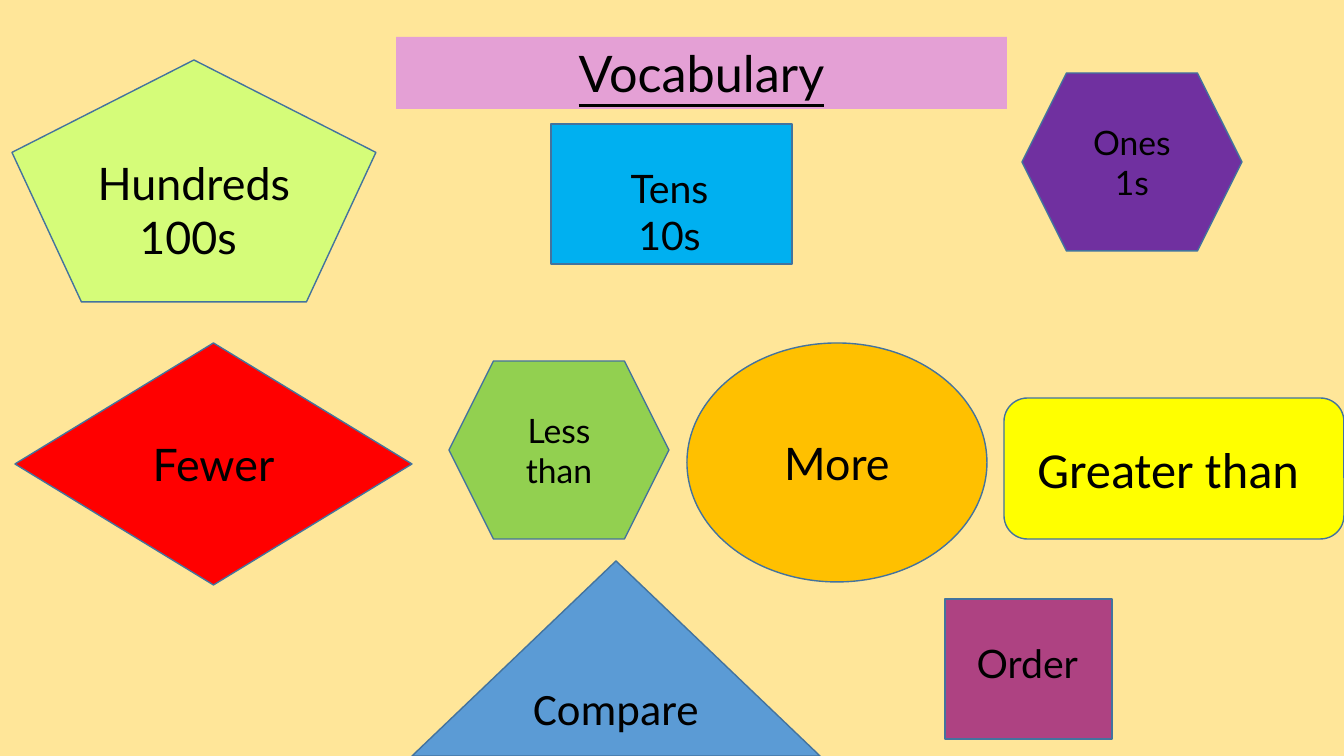
from pptx import Presentation
from pptx.dml.color import RGBColor
from pptx.enum.shapes import MSO_SHAPE as SHAPE
from pptx.enum.text import MSO_ANCHOR as ANCHOR, MSO_AUTO_SIZE as AUTO, PP_ALIGN as ALIGN
from pptx.util import Emu, Pt

PX = 914400 / 100.8
SLIDE = (1344, 756)

CREAM = RGBColor(0xFF, 0xE6, 0x99)
PINK = RGBColor(0xE4, 0xA0, 0xD5)
BLACK = RGBColor(0, 0, 0)
OUTLINE = RGBColor(0x43, 0x73, 0x9E)
SKY = RGBColor(0x00, 0xB0, 0xF0)
PURPLE = RGBColor(0x70, 0x30, 0xA0)
RED = RGBColor(0xFF, 0x00, 0x00)
LIME = RGBColor(0xD5, 0xFC, 0x79)
ORANGE = RGBColor(0xFF, 0xC0, 0x00)
GREEN = RGBColor(0x92, 0xD0, 0x50)
YELLOW = RGBColor(0xFF, 0xFF, 0x00)
BLUE = RGBColor(0x5B, 0x9B, 0xD5)
PLUM = RGBColor(0xAE, 0x42, 0x82)

TITLE = ("Vocabulary", (396, 37, 611, 72))

# kind (None for a text box), box in px, fill, lines, font, size
WORDS = [
    (SHAPE.RECTANGLE, (551, 124, 241, 140), SKY, [], None, None),
    (SHAPE.HEXAGON, (1022, 73, 220, 178), PURPLE, ["Ones", "1s"], "Lato", 24),
    (SHAPE.DIAMOND, (15, 343, 397, 242), RED, ["Fewer"], "Lato", 32),
    (SHAPE.REGULAR_PENTAGON, (12, 60, 364, 242), LIME, ["Hundreds", "100s "], "Lato", 32),
    (None, (567, 159, 205, 105), None, ["Tens", "10s"], "Lato", 28),
    (SHAPE.OVAL, (687, 343, 300, 239), ORANGE, ["More"], "Lato", 32),
    (SHAPE.HEXAGON, (449, 361, 220, 178), GREEN, ["Less than"], "Lato", 24),
    (SHAPE.ROUNDED_RECTANGLE, (1004, 398, 340, 141), YELLOW, ["Greater than "], "Calibri", 36),
    (SHAPE.ISOSCELES_TRIANGLE, (412, 561, 408, 195), BLUE, ["Compare"], "Calibri", 32),
    (SHAPE.RECTANGLE, (945, 599, 167, 140), PLUM, [], None, None),
    (None, (961, 634, 142, 57), None, ["Order "], "Lato", 28),
]


def emu(box):
    return [Emu(round(v * PX)) for v in box]


def write(tf, lines, font, size, anchor):
    tf.word_wrap = True
    tf.auto_size = AUTO.NONE
    tf.vertical_anchor = anchor
    for i, line in enumerate(lines):
        p = tf.paragraphs[0] if i == 0 else tf.add_paragraph()
        p.text = line
        p.alignment = ALIGN.CENTER
        p.line_spacing = 1.0
        p.font.name = font
        p.font.size = Pt(size)
        p.font.color.rgb = BLACK


def add_word(shapes, kind, box, fill, lines, font, size):
    if kind is None:
        sp = shapes.add_textbox(*emu(box))
    else:
        sp = shapes.add_shape(kind, *emu(box))
        sp.shadow.inherit = False
        sp.fill.solid()
        sp.fill.fore_color.rgb = fill
        sp.line.color.rgb = OUTLINE
        sp.line.width = Pt(1)
    if lines:
        write(sp.text_frame, lines, font, size, ANCHOR.TOP if kind is None else ANCHOR.MIDDLE)


def main():
    prs = Presentation()
    prs.slide_width, prs.slide_height = emu(SLIDE)
    s = prs.slides.add_slide(prs.slide_layouts[5])
    s.background.fill.solid()
    s.background.fill.fore_color.rgb = CREAM

    text, box = TITLE
    title = s.shapes.title
    title.left, title.top, title.width, title.height = emu(box)
    title.fill.solid()
    title.fill.fore_color.rgb = PINK
    write(title.text_frame, [text], "Lato", 36, ANCHOR.TOP)
    title.text_frame.paragraphs[0].font.underline = True

    for word in WORDS:
        add_word(s.shapes, *word)
    prs.save("out.pptx")


if __name__ == "__main__":
    main()
